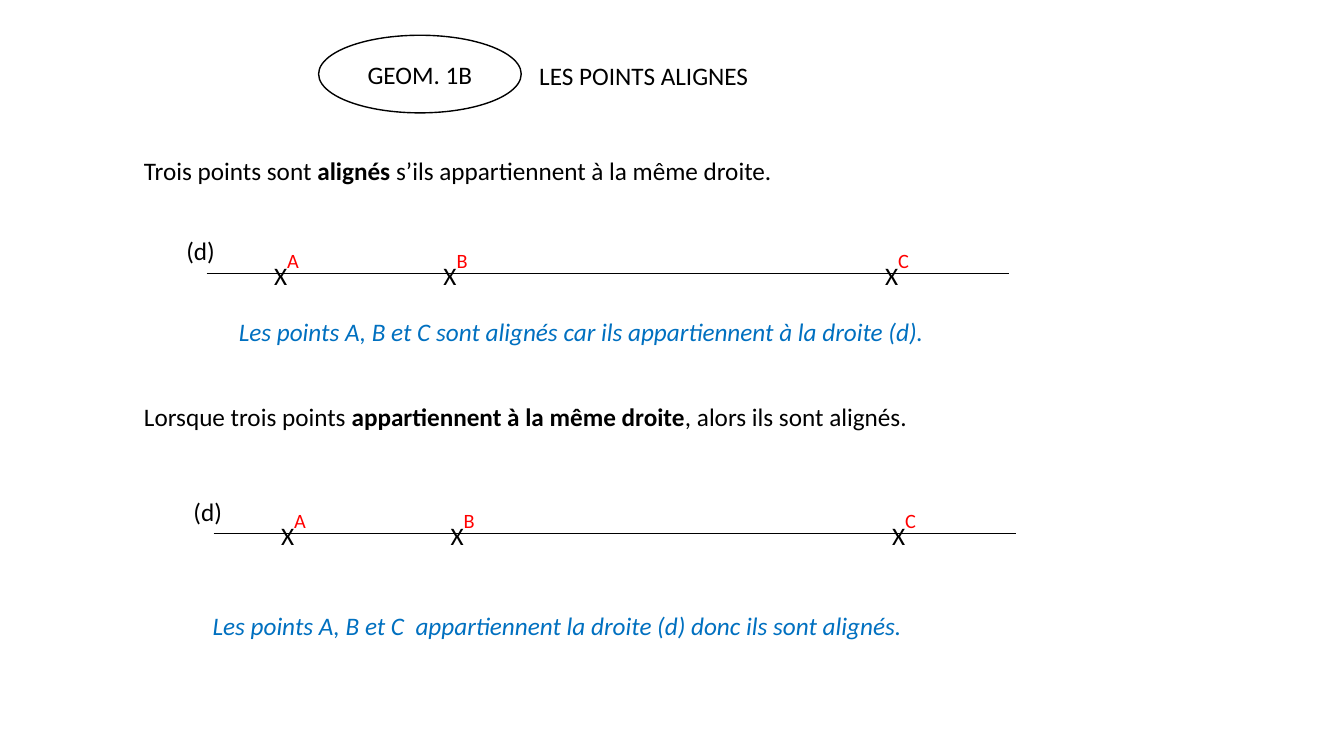
from lxml.etree import SubElement
from pptx import Presentation
from pptx.dml.color import RGBColor
from pptx.enum.shapes import MSO_CONNECTOR, MSO_SHAPE
from pptx.enum.text import MSO_ANCHOR, MSO_AUTO_SIZE, PP_ALIGN
from pptx.oxml.ns import qn
from pptx.util import Inches, Pt

BLACK = RGBColor(0x00, 0x00, 0x00)
RED = RGBColor(0xFF, 0x00, 0x00)
BLUE = RGBColor(0x00, 0x70, 0xC0)

FONT = "Calibri"
TEXT_SIZE = 18
LABEL_SIZE = 25
LABEL_BASELINE = 50000
# Seven 18 pt lines separate the two rules.
RULE_GAP = Pt(154)

RULES = [
    ("Trois points sont ", "alignés", " s’ils appartiennent à la même droite."),
    ("Lorsque trois points ", "appartiennent à la même droite", ", alors ils sont alignés."),
]
# Label, offset from the left of the figure, width of the text box
POINTS = [("A", 0.87, 0.47), ("B", 2.55, 0.46), ("C", 6.93, 0.46)]


def add_run(paragraph, text, color=BLACK, size=TEXT_SIZE, bold=False, italic=False):
    run = paragraph.add_run()
    run.text = text
    run.font.name = FONT
    run.font.size = Pt(size)
    run.font.bold = bold
    run.font.italic = italic
    run.font.color.rgb = color
    return run


def add_text_frame(shapes, left, top, width, height, wrap=False):
    box = shapes.add_textbox(Inches(left), Inches(top), Inches(width), Inches(height))
    box.text_frame.word_wrap = wrap
    box.text_frame.auto_size = MSO_AUTO_SIZE.SHAPE_TO_FIT_TEXT
    return box.text_frame


def add_heading(shapes, left, top):
    badge = shapes.add_shape(
        MSO_SHAPE.OVAL, Inches(left), Inches(top), Inches(2.01), Inches(0.77))
    badge.shadow.inherit = False
    badge.fill.background()
    badge.line.color.rgb = BLACK
    badge.line.width = Pt(1)
    badge.text_frame.vertical_anchor = MSO_ANCHOR.MIDDLE
    code = badge.text_frame.paragraphs[0]
    code.alignment = PP_ALIGN.CENTER
    add_run(code, "GEOM. 1B")

    title = add_text_frame(shapes, left + 2.09, top + 0.2, 6.13, 0.4, wrap=True)
    add_run(title.paragraphs[0], "LES POINTS ALIGNES")


def add_rules(shapes, left, top, width, height):
    """Write both rules in one box, with their key words in bold."""
    frame = add_text_frame(shapes, left, top, width, height)
    for index, (start, key_words, end) in enumerate(RULES):
        rule = frame.add_paragraph() if index else frame.paragraphs[0]
        if index:
            rule.space_before = RULE_GAP
        add_run(rule, start)
        add_run(rule, key_words, bold=True)
        add_run(rule, end)


def add_conclusion(shapes, left, top, width, text):
    frame = add_text_frame(shapes, left, top, width, 0.4)
    add_run(frame.paragraphs[0], text, color=BLUE, italic=True)


def add_line_figure(shapes, left, top):
    """Draw line (d) with its three marked points as one group."""
    figure = shapes.add_group_shape().shapes
    line_y = Inches(top + 0.42)
    line = figure.add_connector(
        MSO_CONNECTOR.STRAIGHT, Inches(left + 0.3), line_y, Inches(left + 8.26), line_y)
    line.line.color.rgb = BLACK
    line.line.width = Pt(0.5)
    SubElement(line._element.spPr, qn("a:effectLst"))

    for label, offset, width in POINTS:
        frame = add_text_frame(figure, left + offset, top + 0.12, width, 0.52)
        point = frame.paragraphs[0]
        add_run(point, "X")
        superscript = add_run(point, label, color=RED, size=LABEL_SIZE)
        superscript.font._element.set("baseline", str(LABEL_BASELINE))

    line_name = add_text_frame(figure, left, top, 0.49, 0.4)
    add_run(line_name.paragraphs[0], "(d)")


def main():
    presentation = Presentation()
    presentation.slide_width = Inches(13.33)
    presentation.slide_height = Inches(7.5)
    shapes = presentation.slides.add_slide(presentation.slide_layouts[6]).shapes

    add_heading(shapes, 3.16, 0.35)
    add_rules(shapes, 1.33, 1.49, 7.84, 2.83)
    add_conclusion(shapes, 2.27, 3.09, 7.1,
                   "Les points A, B et C sont alignés car ils appartiennent à la droite (d).")
    add_line_figure(shapes, 1.75, 2.29)
    add_line_figure(shapes, 1.82, 4.87)
    add_conclusion(shapes, 2.01, 6.01, 7.06,
                   "Les points A, B et C  appartiennent la droite (d) donc ils sont alignés.")
    presentation.save("out.pptx")


if __name__ == "__main__":
    main()
